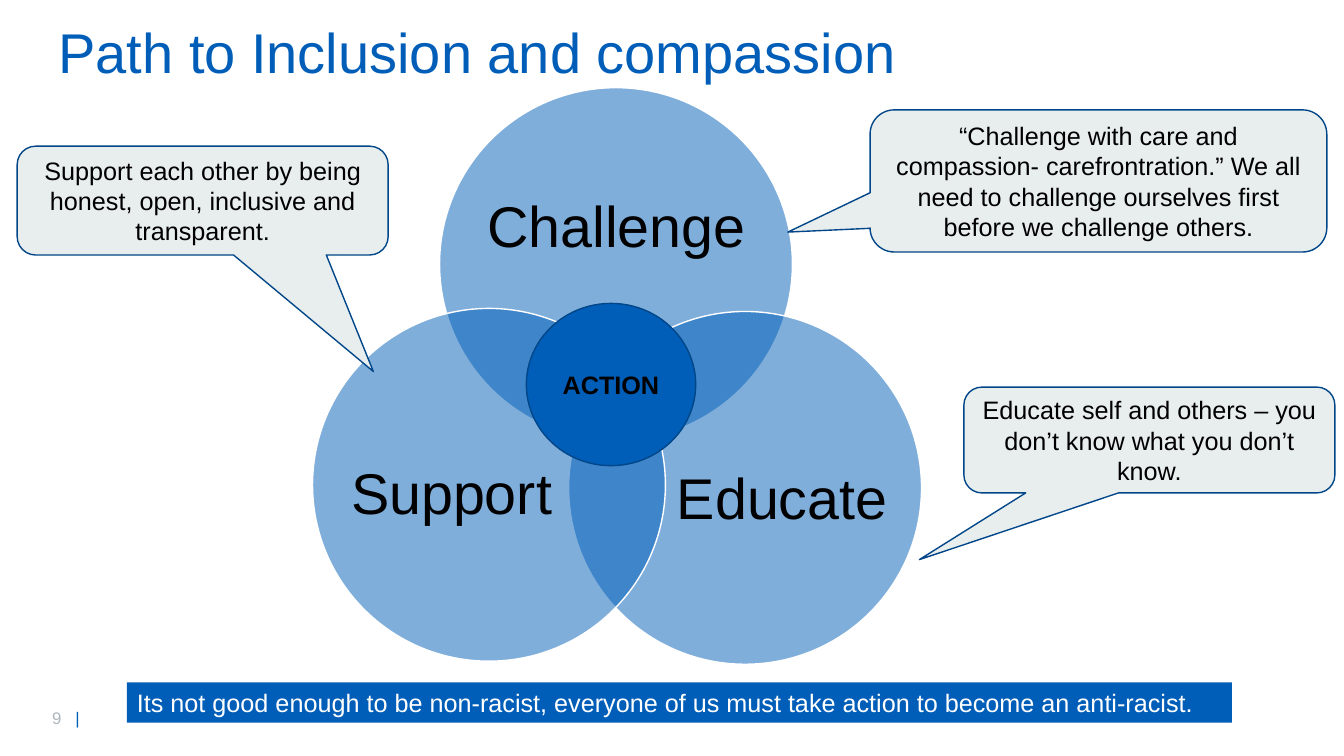
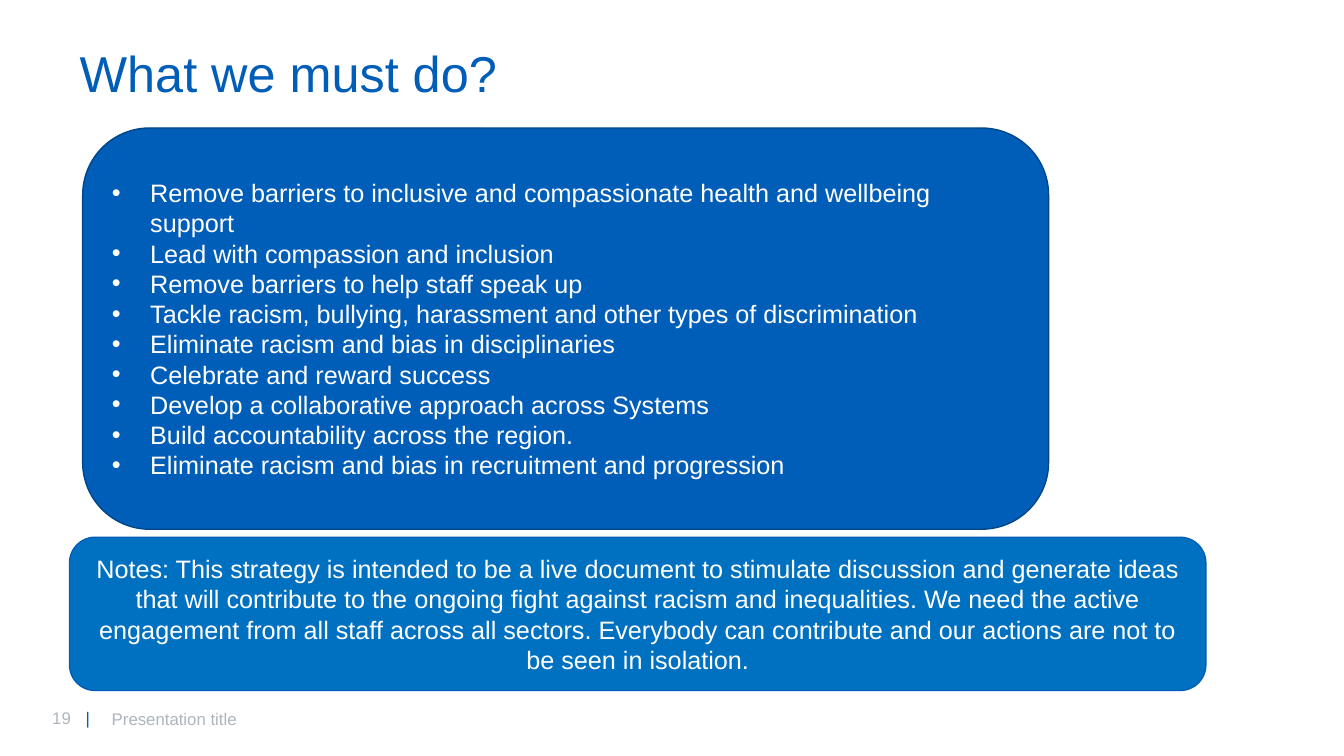
from dataclasses import dataclass
from lxml import etree
from pptx import Presentation
from pptx.dml.color import RGBColor
from pptx.enum import shapes, text
from pptx.oxml import ns
from pptx.util import Inches, Pt


@dataclass(frozen=True)
class Theme:
    font: str = "Arial"
    blue: str = "005EB8"
    edge: str = "004688"
    bright: str = "0070C0"
    pale: str = "E8EDEE"
    grey: str = "ADB6BE"
    white: str = "FFFFFF"
    black: str = "000000"
    body: int = 18
    small: int = 12
    label: int = 41


T = Theme()
KIND = shapes.MSO_SHAPE
ALIGN = text.PP_ALIGN
ANCHOR = text.MSO_ANCHOR

PATH = {
    "title": "Path to Inclusion and compassion",
    "title_at": (0.48, 0.21),
    "title_size": 40,
    "number": "9",
}
DIAMETER = 3.5
CIRCLES = [
    ("Challenge", (4.36, 0.87), (4.83, 1.48, 2.57, 1.58)),
    ("Educate", (5.64, 3.09), (6.71, 4, 2.1, 1.93)),
    ("Support", (3.1, 3.06), (3.43, 3.96, 2.1, 1.93)),
]
ACTION = ("ACTION", (5.22, 3.01, 1.68, 1.61))
CALLOUTS = [
    ("“Challenge with care and compassion- carefrontration.” We all need to "
     "challenge ourselves first before we challenge others.",
     (8.63, 1.09, 4.53, 1.41), (-0.68, 0.36)),
    ("Educate self and others – you don’t know what you don’t know.",
     (9.56, 3.84, 3.68, 1.05), (-0.62, 1.13)),
    ("Support each other by being honest, open, inclusive and transparent.",
     (0.17, 1.45, 3.68, 1.08), (0.46, 1.57)),
]
BAND = ("Its not good enough to be non-racist, everyone of us must take action "
        "to become an anti-racist.", (1.26, 6.77, 10.96, 0.4))

ACTIONS = {
    "title": "What we must do?",
    "title_at": (0.69, 0.42),
    "title_size": 36,
    "number": "19",
}
PANEL = (0.82, 1.27, 9.58, 3.98)
PANEL_INSET = 0.19
BULLETS = [
    "Remove barriers to inclusive and compassionate health and wellbeing support",
    "Lead with compassion and inclusion",
    "Remove barriers to help staff speak up",
    "Tackle racism, bullying, harassment and other types of discrimination",
    "Eliminate racism and bias in disciplinaries",
    "Celebrate and reward success",
    "Develop a collaborative approach across Systems",
    "Build accountability across the region.",
    "Eliminate racism and bias in recruitment and progression",
]
NOTES = ("Notes: This strategy is intended to be a live document to stimulate "
         "discussion and generate ideas that will contribute to the ongoing fight "
         "against racism and inequalities. We need the active engagement from all "
         "staff across all sectors. Everybody can contribute and our actions are "
         "not to be seen in isolation.", (0.69, 5.33, 11.27, 1.52))
FOOTER = ("Presentation title", (1.01, 6.93, 8.35, 0.4))


def assign(target, values):
    for name, value in values.items():
        setattr(target, name, value)


def place(sp, at):
    assign(sp, dict(zip(("left", "top", "width", "height"), map(Inches, at))))


def set_font(font, size=T.body, color=T.white, bold=False):
    assign(font, {"name": T.font, "size": Pt(size), "bold": bold})
    font.color.rgb = RGBColor.from_string(color)


def set_frame(sp, anchor=ANCHOR.MIDDLE, margin=None):
    tf = sp.text_frame
    assign(tf, {"word_wrap": True, "auto_size": text.MSO_AUTO_SIZE.NONE,
                "vertical_anchor": anchor})
    if margin is not None:
        assign(tf, {f"margin_{side}": Inches(margin)
                    for side in ("left", "top", "right", "bottom")})
    return tf


def write(sp, words, align=ALIGN.CENTER, spacing=1.0, margin=None, **font):
    p = set_frame(sp, margin=margin).paragraphs[0]
    assign(p, {"text": words, "alignment": align, "line_spacing": spacing})
    set_font(p.runs[0].font, **font)


def add_shape(s, kind, at, fill, line=None, alpha=None, adjust=()):
    sp = s.shapes.add_shape(kind, *map(Inches, at))
    sp.shadow.inherit = False
    sp.fill.solid()
    sp.fill.fore_color.rgb = RGBColor.from_string(fill)
    if line:
        sp.line.color.rgb = RGBColor.from_string(line)
        sp.line.width = Pt(1)
    else:
        sp.line.fill.background()
    if alpha:
        color = sp.element.spPr.find(ns.qn("a:solidFill"))[0]
        etree.SubElement(color, ns.qn("a:alpha"), val=str(alpha * 1000))
    for i, value in enumerate(adjust):
        sp.adjustments[i] = value
    return sp


def add_label(s, words, at, **style):
    write(s.shapes.add_textbox(*map(Inches, at)), words, **style)


def add_number(s, number):
    sp = s.shapes.add_textbox(*map(Inches, (0.42, 6.97, 0.94, 0.3)))
    p = set_frame(sp, ANCHOR.TOP).paragraphs[0]
    tabs = etree.SubElement(p._p.get_or_add_pPr(), ns.qn("a:tabLst"))
    stop = Inches(0.23 + 0.1 * (len(number) - 1))
    etree.SubElement(tabs, ns.qn("a:tab"), pos=str(stop), algn="l")
    for words, color in ((number + "\t", T.grey), ("|", T.blue)):
        r = p.add_run()
        r.text = words
        set_font(r.font, T.small, color)


def add_slide(prs, layout, content):
    s = prs.slides.add_slide(prs.slide_layouts.get_by_name(layout))
    title = s.shapes.title
    place(title, (*content["title_at"], 9.58, 0.67))
    write(title, content["title"], ALIGN.LEFT, 0.9,
          size=content["title_size"], color=T.blue)
    add_number(s, content["number"])
    return s


def fill_list(body, items):
    tf = set_frame(body)
    for i, words in enumerate(items):
        p = tf.add_paragraph() if i else tf.paragraphs[0]
        assign(p, {"text": words, "alignment": ALIGN.LEFT, "line_spacing": 1.0,
                   "space_before": Pt(0)})
        pPr = p._p.get_or_add_pPr()
        for name, value in (("marL", 0.38), ("indent", -0.38)):
            pPr.set(name, str(Inches(value)))
        etree.SubElement(pPr, ns.qn("a:buFont"), typeface=T.font)
        etree.SubElement(pPr, ns.qn("a:buChar"), char="•")
        set_font(p.runs[0].font)


def build_path(prs):
    s = add_slide(prs, "Title Only", PATH)
    for words, corner, label_at in CIRCLES:
        add_shape(s, KIND.OVAL, (*corner, DIAMETER, DIAMETER), T.blue, T.white, 50)
        add_label(s, words, label_at, spacing=0.9, margin=0,
                  size=T.label, color=T.black)
    words, at = ACTION
    write(add_shape(s, KIND.OVAL, at, T.blue, T.edge), words,
          color=T.black, bold=True)
    for words, at, tip in CALLOUTS:
        sp = add_shape(s, KIND.ROUNDED_RECTANGULAR_CALLOUT, at, T.pale, T.edge,
                       adjust=(*tip, 0.17))
        write(sp, words, color=T.black)
    words, at = BAND
    write(add_shape(s, KIND.RECTANGLE, at, T.blue), words, ALIGN.LEFT)


def build_actions(prs):
    s = add_slide(prs, "Title and Content", ACTIONS)
    words, at = FOOTER
    add_label(s, words, at, align=ALIGN.LEFT, size=T.small, color=T.grey)
    words, at = NOTES
    write(add_shape(s, KIND.ROUNDED_RECTANGLE, at, T.bright, T.blue), words)
    panel = add_shape(s, KIND.FLOWCHART_ALTERNATE_PROCESS, PANEL, T.blue, T.edge)
    body = s.placeholders[1]
    left, top, width, height = PANEL
    place(body, (left + PANEL_INSET, top + PANEL_INSET,
                 width - 2 * PANEL_INSET, height - 2 * PANEL_INSET))
    fill_list(body, BULLETS)
    panel.element.addnext(body.element)


def main():
    prs = Presentation()
    assign(prs, {"slide_width": Inches(13.33), "slide_height": Inches(7.5)})
    build_path(prs)
    build_actions(prs)
    prs.save("out.pptx")


if __name__ == "__main__":
    main()
